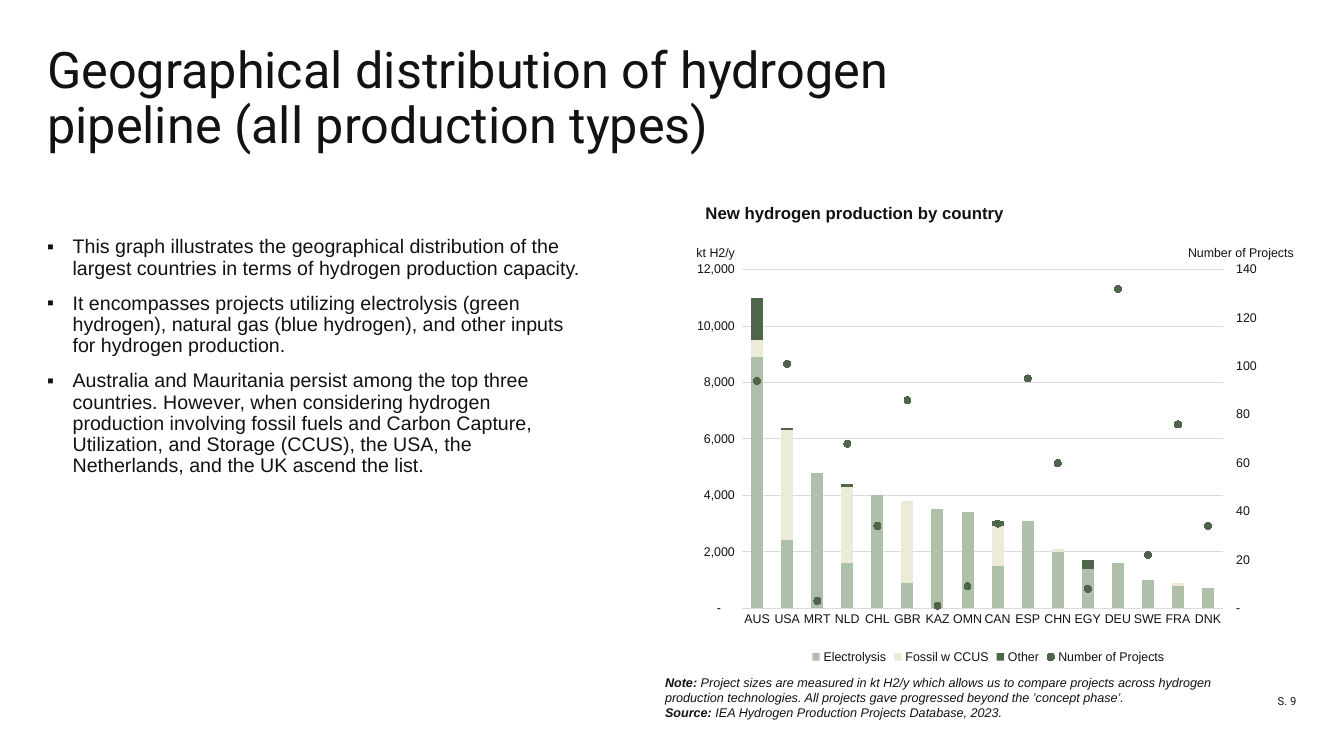
from copy import deepcopy
from dataclasses import dataclass

from lxml.etree import SubElement
from pptx import Presentation
from pptx.chart.axis import CategoryAxis, ValueAxis
from pptx.chart.data import CategoryChartData
from pptx.dml.color import RGBColor
from pptx.enum.chart import XL_CHART_TYPE, XL_LEGEND_POSITION, XL_MARKER_STYLE, XL_TICK_MARK
from pptx.enum.text import MSO_ANCHOR, MSO_AUTO_SIZE, PP_ALIGN
from pptx.oxml import parse_xml
from pptx.oxml.ns import nsdecls, qn
from pptx.util import Cm, Pt


@dataclass(frozen=True)
class Theme:
    ink: RGBColor = RGBColor(0x12, 0x12, 0x12)
    grid: RGBColor = RGBColor(0xDB, 0xDB, 0xDB)
    sage: RGBColor = RGBColor(0xAF, 0xC0, 0xAA)
    cream: RGBColor = RGBColor(0xEB, 0xEB, 0xD7)
    forest: RGBColor = RGBColor(0x4E, 0x64, 0x4B)
    heading_font: str = "Roboto"
    text_font: str = "Arial"
    title_size: int = 36
    body_size: int = 14
    caption_size: int = 12
    note_size: int = 9
    page_size: int = 8


theme = Theme()


def write(para, text, size, name=theme.text_font, bold=False, italic=False):
    span = para.add_run()
    span.text = text
    font = span.font
    font.name, font.size, font.bold, font.italic = name, Pt(size), bold, italic
    font.color.rgb = theme.ink


def place(element, index, **sizes):
    """Give a chart part a manual layout, in fractions of the chart."""
    layout = element.find(qn("c:layout"))
    if layout is not None:
        element.remove(layout)
    layout = parse_xml(f'<c:layout {nsdecls("c")}><c:manualLayout/></c:layout>')
    for tag, value in sizes.items():
        SubElement(layout[0], qn(f"c:{tag}")).set("val", str(value))
    element.insert(index, layout)


deck = Presentation()
deck.slide_width, deck.slide_height = Cm(33.87), Cm(19.05)
page = deck.slides.add_slide(deck.slide_layouts[1])

# Title and bullets
title, body = page.placeholders
title.left, title.top, title.width, title.height = Cm(1.19), Cm(1.19), Cm(24.49), Cm(2.69)
body.left, body.top, body.width, body.height = Cm(1.19), Cm(5.97), Cm(13.59), Cm(8.43)
for holder, anchor in ((title, MSO_ANCHOR.BOTTOM), (body, MSO_ANCHOR.TOP)):
    frame = holder.text_frame
    frame.margin_left = frame.margin_right = frame.margin_top = frame.margin_bottom = 0
    frame.vertical_anchor = anchor
    frame.auto_size = MSO_AUTO_SIZE.NONE
    frame.word_wrap = True

para = title.text_frame.paragraphs[0]
para.alignment = PP_ALIGN.LEFT
para.line_spacing = 0.9
write(para, "Geographical distribution of hydrogen pipeline (all production types)",
      theme.title_size, theme.heading_font)

points = (
    "This graph illustrates the geographical distribution of the largest countries "
    "in terms of hydrogen production capacity.",
    "It encompasses projects utilizing electrolysis (green hydrogen), natural gas "
    "(blue hydrogen), and other inputs for hydrogen production.",
    "Australia and Mauritania persist among the top three countries. However, when "
    "considering hydrogen production involving fossil fuels and Carbon Capture, "
    "Utilization, and Storage (CCUS), the USA, the Netherlands, and the UK ascend the list.",
)
for number, point in enumerate(points):
    para = body.text_frame.add_paragraph() if number else body.text_frame.paragraphs[0]
    para.line_spacing = 0.9
    para.space_before = Pt(10 if number else 0)
    properties = para._p.get_or_add_pPr()
    properties.set("marL", str(Cm(0.64)))
    properties.set("indent", str(-Cm(0.64)))
    SubElement(properties, qn("a:buChar")).set("char", "▪")
    write(para, point, theme.body_size)

# Stacked columns
chart_data = CategoryChartData(number_format="#,##0")
chart_data.categories = ["AUS", "USA", "MRT", "NLD", "CHL", "GBR", "KAZ", "OMN",
                         "CAN", "ESP", "CHN", "EGY", "DEU", "SWE", "FRA", "DNK"]
chart_data.add_series("Electrolysis", (8900, 2400, 4800, 1600, 4000, 900, 3500, 3400,
                                       1500, 3100, 2000, 1400, 1600, 1000, 800, 700))
chart_data.add_series("Fossil w CCUS", (600, 3900, 0, 2700, 0, 2900, 0, 0,
                                        1400, 0, 100, 0, 0, 0, 100, 0))
chart_data.add_series("Other", (1500, 100, 0, 100, 0, 0, 0, 0,
                                200, 0, 0, 300, 0, 0, 0, 0))
chart_data.add_series("Number of Projects", (94, 101, 3, 68, 34, 86, 1, 9,
                                             35, 95, 60, 8, 132, 22, 76, 34))
chart = page.shapes.add_chart(XL_CHART_TYPE.COLUMN_STACKED, Cm(17.45), Cm(5.97),
                              Cm(15.21), Cm(10.87), chart_data).chart
chart.has_title = False
chart.font.name, chart.font.size = theme.text_font, Pt(theme.note_size)
chart.font.color.rgb = theme.ink
chart.has_legend = True
chart.legend.position = XL_LEGEND_POSITION.BOTTOM
chart.legend.include_in_layout = False

columns = chart.plots[0]
columns.gap_width, columns.overlap = 150, 100
columns.vary_by_categories = False
for series, color in zip(columns.series, (theme.sage, theme.cream, theme.forest)):
    series.format.fill.solid()
    series.format.fill.fore_color.rgb = color

country_axis, volume_axis = chart.category_axis, chart.value_axis
country_axis.major_tick_mark = XL_TICK_MARK.NONE
volume_axis.major_tick_mark = XL_TICK_MARK.NONE
volume_axis.minimum_scale = 0
volume_axis.tick_labels.number_format = '_-* #,##0_-;\\-* #,##0_-;_-* "-"??_-;_-@_'
volume_axis.tick_labels.number_format_is_linked = False
volume_axis.format.line.fill.background()
volume_axis.has_major_gridlines = True
for line in (country_axis.format.line, volume_axis.major_gridlines.format.line):
    line.color.rgb = theme.grid
    line.width = Pt(0.75)

# Project counts as markers on a second pair of axes
plot_area = columns._element.getparent()
markers = parse_xml(
    f'<c:lineChart {nsdecls("c")}><c:grouping val="standard"/><c:varyColors val="0"/>'
    '<c:marker val="1"/><c:axId val="5001"/><c:axId val="5002"/></c:lineChart>')
count_series = columns._element.findall(qn("c:ser"))[-1]
invert = count_series.find(qn("c:invertIfNegative"))
if invert is not None:
    count_series.remove(invert)
markers.insert(2, count_series)
columns._element.addnext(markers)

hidden_element = deepcopy(country_axis._element)
count_element = deepcopy(volume_axis._element)
for element, own, other in ((hidden_element, "5001", "5002"), (count_element, "5002", "5001")):
    element.find(qn("c:axId")).set("val", own)
    element.find(qn("c:crossAx")).set("val", other)
volume_axis._element.addnext(count_element)
count_element.addnext(hidden_element)
count_element.find(qn("c:axPos")).set("val", "r")
count_element.find(qn("c:crosses")).set("val", "max")
CategoryAxis(hidden_element).visible = False
count_axis = ValueAxis(count_element)
count_axis.has_major_gridlines = False
count_axis.major_tick_mark = XL_TICK_MARK.OUTSIDE
volume_axis.maximum_scale, volume_axis.major_unit = 12000, 2000
count_axis.maximum_scale, count_axis.major_unit = 140, 20

counts = chart.plots[1].series[0]
counts.smooth = False
counts.format.line.fill.background()
counts.marker.style, counts.marker.size = XL_MARKER_STYLE.CIRCLE, 5
counts.marker.format.fill.solid()
counts.marker.format.fill.fore_color.rgb = theme.forest
counts.marker.format.line.color.rgb = theme.forest

place(plot_area, 0, layoutTarget="inner", xMode="edge", yMode="edge",
      x=0.084, y=0.076, w=0.813, h=0.785)
for axis, caption, left in ((volume_axis, "kt H2/y", 0.003), (count_axis, "Number of Projects", 0.834)):
    frame = axis.axis_title.text_frame
    write(frame.paragraphs[0], caption, theme.note_size)
    axis_title = axis.axis_title._element
    direction = axis_title.find(".//" + qn("a:bodyPr"))
    direction.set("rot", "0")
    direction.set("vert", "horz")
    place(axis_title, 1, xMode="edge", yMode="edge", x=left, y=0.012)

# Caption, note and page number
boxes = []
for left, top, width, height in ((17.53, 4.98, 16.92, 0.76), (16.51, 16.87, 14.86, 1.42),
                                 (30.05, 16.84, 2.62, 0.99)):
    box = page.shapes.add_textbox(Cm(left), Cm(top), Cm(width), Cm(height))
    box.text_frame.word_wrap = True
    boxes.append(box.text_frame)
caption, note, page_number = boxes

write(caption.paragraphs[0], "New hydrogen production by country", theme.caption_size, bold=True)

para = note.paragraphs[0]
write(para, "Note: ", theme.note_size, bold=True, italic=True)
write(para, "Project sizes are measured in kt H2/y which allows us to compare projects across "
      "hydrogen production technologies. All projects gave progressed beyond the "
      "’concept phase’.", theme.note_size, italic=True)
para = note.add_paragraph()
write(para, "Source:", theme.note_size, bold=True, italic=True)
write(para, " IEA Hydrogen Production Projects Database, 2023.", theme.note_size, italic=True)

page_number.margin_left = page_number.margin_right = 0
page_number.margin_top = page_number.margin_bottom = 0
page_number.vertical_anchor = MSO_ANCHOR.BOTTOM
page_number.paragraphs[0].alignment = PP_ALIGN.RIGHT
write(page_number.paragraphs[0], "S. 9", theme.page_size, theme.heading_font)

deck.save("out.pptx")
